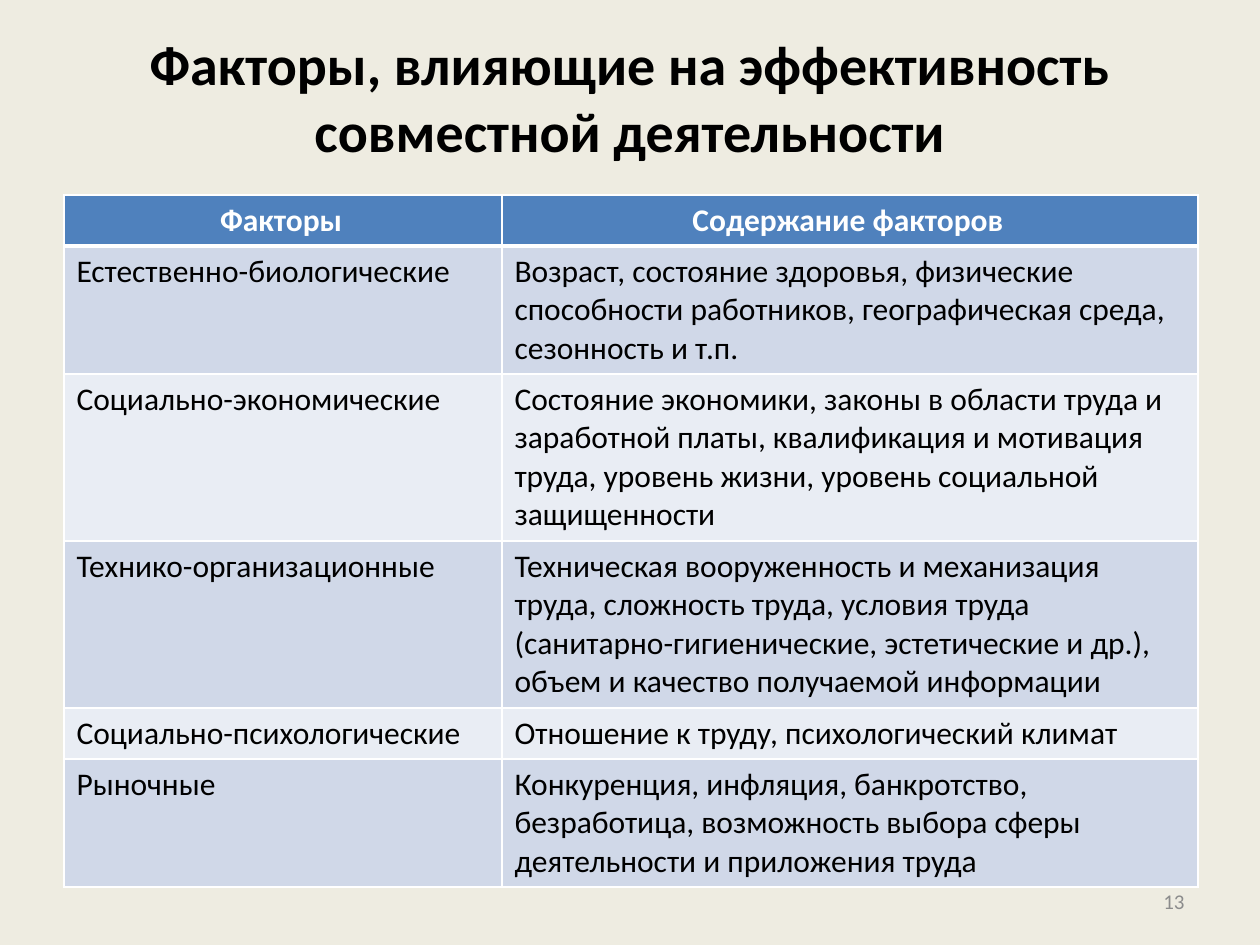
from dataclasses import dataclass

from lxml import etree
from pptx import Presentation
from pptx import util as u
from pptx.dml.color import RGBColor
from pptx.enum import text
from pptx.oxml import ns

EMU_PER_PX = 914400 / 126
FONT = "Calibri"
BLACK, WHITE, GREY = "000000", "FFFFFF", "8C8C8C"
HEADER_FILL = "4F81BD"
BAND_FILLS = ("D0D8E8", "E9EDF4")


@dataclass(frozen=True)
class Factor:
    name: str
    content: str
    height: int


FACTORS = (
    Factor("Естественно-биологические",
           "Возраст, состояние здоровья, физические способности работников, "
           "географическая среда, сезонность и т.п.", 128),
    Factor("Социально-экономические",
           "Состояние экономики, законы в области труда и заработной платы, "
           "квалификация и мотивация труда, уровень жизни, уровень социальной "
           "защищенности", 167),
    Factor("Технико-организационные",
           "Техническая вооруженность и механизация труда, сложность труда, "
           "условия труда (санитарно-гигиенические, эстетические и др.), "
           "объем и качество получаемой информации", 167),
    Factor("Социально-психологические",
           "Отношение к труду, психологический климат", 51),
    Factor("Рыночные",
           "Конкуренция, инфляция, банкротство, безработица, возможность "
           "выбора сферы деятельности и приложения труда", 128),
)
HEADER_HEIGHT = 51
COLUMN_WIDTHS = (438, 696)


def px(length: int) -> u.Emu:
    return u.Emu(round(length * EMU_PER_PX))


def color(value: str) -> RGBColor:
    return RGBColor.from_string(value)


def place(shape, left: int, top: int, width: int, height: int) -> None:
    shape.left, shape.top = px(left), px(top)
    shape.width, shape.height = px(width), px(height)


def format_para(para, size: int, ink: str, align: str, bold: bool = False) -> None:
    para.alignment = getattr(text.PP_ALIGN, align)
    para.font.name, para.font.size = FONT, u.Pt(size)
    para.font.bold = bold
    para.font.color.rgb = color(ink)


def style_cell(cell, fill: str, top: int = 1, bottom: int = 1) -> None:
    """Fill the cell and give it white borders; widths are in points."""
    properties = cell._tc.get_or_add_tcPr()
    for side, width in (("L", 1), ("R", 1), ("T", top), ("B", bottom)):
        line = etree.SubElement(properties, ns.qn(f"a:ln{side}"), w=str(u.Pt(width)))
        solid = etree.SubElement(line, ns.qn("a:solidFill"))
        etree.SubElement(solid, ns.qn("a:srgbClr"), val=WHITE)
    cell.fill.solid()
    cell.fill.fore_color.rgb = color(fill)


def add_title(page) -> None:
    title = page.shapes.title
    place(title, 63, 18, 1134, 157)
    title.text_frame.vertical_anchor = text.MSO_ANCHOR.MIDDLE
    title.text_frame.text = "Факторы, влияющие на эффективность совместной деятельности"
    format_para(title.text_frame.paragraphs[0], 32, BLACK, "CENTER", bold=True)


def add_header(table) -> None:
    for cell, label in zip(table.rows[0].cells, ("Факторы\t", "Содержание факторов")):
        style_cell(cell, HEADER_FILL, bottom=3)
        cell.text = label
        format_para(cell.text_frame.paragraphs[0], 18, WHITE, "CENTER", bold=True)
    tab = table.cell(0, 1).text_frame.paragraphs[0].add_run()
    tab.text = "\t"
    tab.font.name, tab.font.size = "Times New Roman", u.Pt(13)


def add_factor_table(page) -> None:
    heights = (HEADER_HEIGHT, *(factor.height for factor in FACTORS))
    frame = page.shapes.add_table(len(heights), len(COLUMN_WIDTHS), px(64), px(195),
                                  px(sum(COLUMN_WIDTHS)), px(sum(heights)))
    table = frame.table
    for column, width in zip(table.columns, COLUMN_WIDTHS):
        column.width = px(width)
    for row, height in zip(table.rows, heights):
        row.height = px(height)
    add_header(table)
    for index, factor in enumerate(FACTORS):
        for cell, words in zip(table.rows[index + 1].cells, (factor.name, factor.content)):
            style_cell(cell, BAND_FILLS[index % 2], top=1 if index else 3)
            cell.text = words
            format_para(cell.text_frame.paragraphs[0], 18, BLACK, "LEFT")


def add_page_number(page) -> None:
    box = page.shapes.add_textbox(px(903), px(876), px(294), px(50))
    frame = box.text_frame
    frame.word_wrap = True
    frame.vertical_anchor = text.MSO_ANCHOR.MIDDLE
    frame.text = "13"
    format_para(frame.paragraphs[0], 12, GREY, "RIGHT")


def main() -> None:
    deck = Presentation()
    deck.slide_width, deck.slide_height = px(1260), px(945)
    page = deck.slides.add_slide(deck.slide_layouts.get_by_name("Title Only"))
    page.background.fill.solid()
    page.background.fill.fore_color.rgb = color("EEECE1")
    add_title(page)
    add_factor_table(page)
    add_page_number(page)
    deck.save("out.pptx")


if __name__ == "__main__":
    main()
